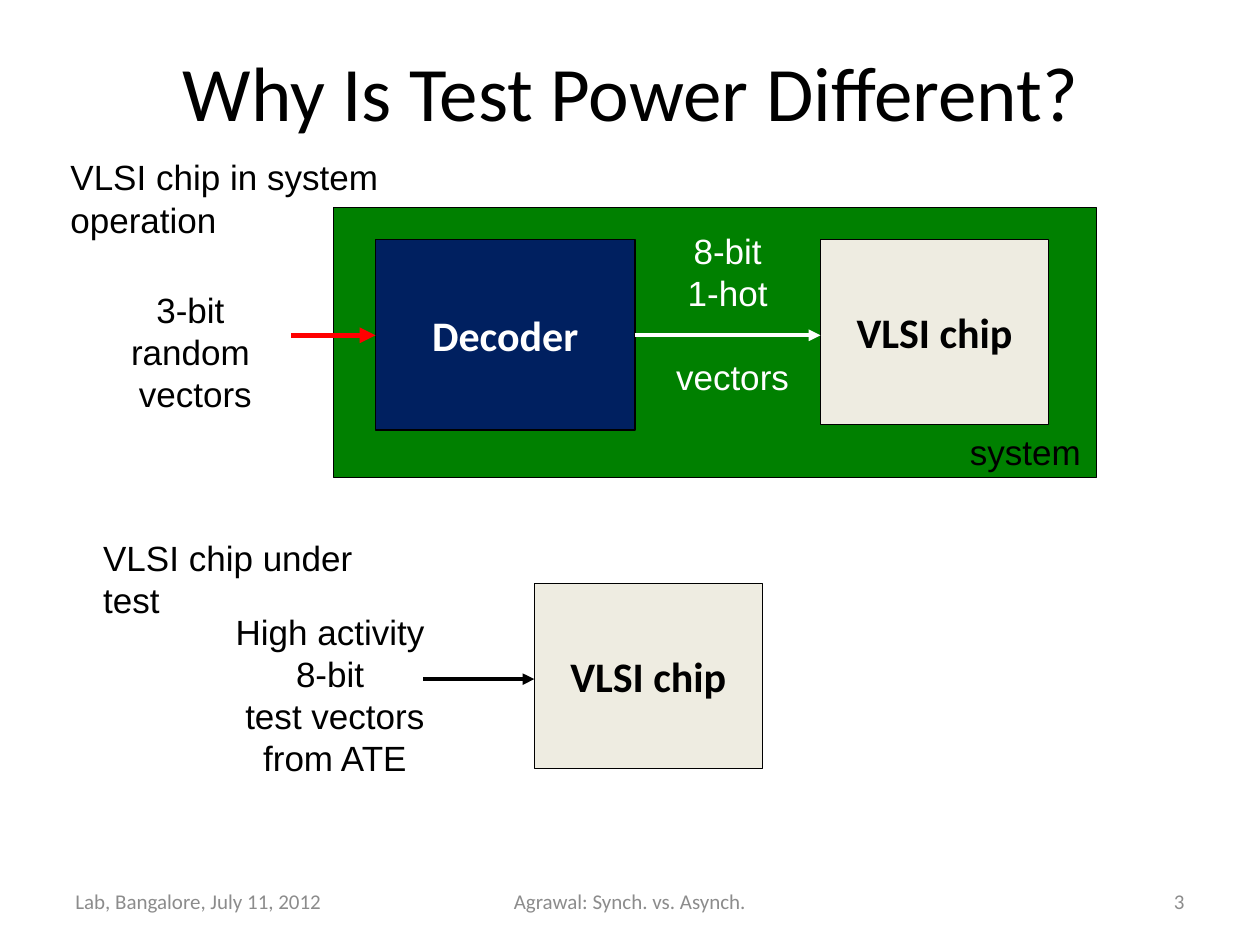
from lxml import etree
from pptx import Presentation
from pptx.dml.color import RGBColor
from pptx.enum.shapes import MSO_CONNECTOR, MSO_SHAPE
from pptx.enum.text import MSO_ANCHOR, PP_ALIGN
from pptx.oxml.ns import qn
from pptx.util import Cm, Pt

RECTANGLE = MSO_SHAPE.RECTANGLE
STRAIGHT = MSO_CONNECTOR.STRAIGHT
MIDDLE, TOP = MSO_ANCHOR.MIDDLE, MSO_ANCHOR.TOP
LEFT, CENTER, RIGHT = PP_ALIGN.LEFT, PP_ALIGN.CENTER, PP_ALIGN.RIGHT
TITLE_ONLY = 5

COLORS = {
    "black": "000000",
    "white": "FFFFFF",
    "red": "FF0000",
    "board": "008000",
    "decoder": "002060",
    "chip": "EEECE1",
    "footer": "8C8C8C",
}
TITLE_FONT = {"name": "Calibri", "size": Pt(44), "bold": False}
BLOCK_FONT = {"name": "Calibri", "size": Pt(24), "bold": True}
LABEL_FONT = {"name": "Arial", "size": Pt(20)}
FOOTER_FONT = {"name": "Calibri", "size": Pt(12)}
LABEL_LINE = Pt(24)


def color(name):
    return RGBColor.from_string(COLORS[name])


def write(frame, lines, font, ink, align=CENTER, anchor=MIDDLE, wrap=True):
    """Fill a text frame with one paragraph per line."""
    frame.word_wrap = wrap
    frame.vertical_anchor = anchor
    for index, line in enumerate(lines):
        paragraph = frame.paragraphs[0] if index == 0 else frame.add_paragraph()
        paragraph.alignment = align
        run = paragraph.add_run()
        run.text = line
        for attribute, value in font.items():
            setattr(run.font, attribute, value)
        run.font.color.rgb = color(ink)


def add_label(slide, box, lines, ink="black", align=CENTER):
    text_box = slide.shapes.add_textbox(*map(Cm, box))
    write(text_box.text_frame, lines, LABEL_FONT, ink, align, TOP)
    for paragraph in text_box.text_frame.paragraphs:
        paragraph.line_spacing = LABEL_LINE
    return text_box


def add_block(slide, box, fill, text=None, ink="black"):
    shape = slide.shapes.add_shape(RECTANGLE, *map(Cm, box))
    shape.shadow.inherit = False
    shape.fill.solid()
    shape.fill.fore_color.rgb = color(fill)
    shape.line.color.rgb = color("black")
    shape.line.width = Pt(0.75)
    if text:
        write(shape.text_frame, [text], BLOCK_FONT, ink, wrap=False)


def add_arrow(slide, start, end, y, ink, width):
    arrow = slide.shapes.add_connector(STRAIGHT, Cm(start), Cm(y), Cm(end), Cm(y))
    arrow.line.color.rgb = color(ink)
    arrow.line.width = Pt(width)
    properties = arrow._element.spPr
    etree.SubElement(properties.find(qn("a:ln")), qn("a:tailEnd"), type="triangle")
    etree.SubElement(properties, qn("a:effectLst"))


def add_title(slide, box, text):
    title = slide.shapes.title
    title.left, title.top, title.width, title.height = map(Cm, box)
    write(title.text_frame, [text], TITLE_FONT, "black")


def add_system_operation(slide, left, top):
    """Chip driven by a decoder on the system board."""
    board_left, decoder_left, chip_left = left + 5.56, left + 6.4, left + 15.37
    decoder_width, block_top, arrow_y = 5.23, top + 1.81, top + 3.74

    # Board and its blocks
    add_block(slide, (board_left, top + 1.17, 15.37, 5.44), "board")
    add_block(slide, (chip_left, block_top, 4.6, 3.73), "chip", "VLSI chip")
    add_block(slide, (decoder_left, block_top, decoder_width, 3.84),
              "decoder", "Decoder", "white")

    # Signals
    add_arrow(slide, decoder_left + decoder_width, chip_left, arrow_y, "white", 2.25)
    add_arrow(slide, left + 4.7, decoder_left, arrow_y, "red", 3)

    # Labels
    add_label(slide, (left, top, 9.65, 1.09), ["VLSI chip in system operation"],
              align=LEFT)
    add_label(slide, (left + 0.51, top + 2.67, 4.32, 1.96),
              ["3-bit random", " vectors"])
    vectors = add_label(slide, (left + 11.7, top + 1.48, 3.6, 3.63),
                        ["8-bit", "1-hot", " vectors"], "white")
    vectors.text_frame.paragraphs[-1].space_before = LABEL_LINE
    add_label(slide, (left + 18.13, top + 5.54, 3, 1.09), ["system"], align=LEFT)


def add_chip_under_test(slide, left, top):
    """Chip driven directly by the tester."""
    chip_left = left + 8.94
    add_block(slide, (chip_left, top + 1.07, 4.6, 3.73), "chip", "VLSI chip")
    add_label(slide, (left, top, 6.6, 1.09), ["VLSI chip under test"], align=LEFT)
    add_label(slide, (left + 2.54, top + 1.5, 4.57, 3.63),
              ["High activity", "8-bit", " test vectors", " from ATE"])
    add_arrow(slide, left + 6.7, chip_left, top + 3, "black", 2.25)


def add_footer(slide, top, height):
    parts = [
        (1.27, 5.93, "Lab, Bangalore, July 11, 2012", LEFT),
        (8.68, 8.04, "Agrawal: Synch. vs. Asynch.", CENTER),
        (18.2, 5.93, "3", RIGHT),
    ]
    for left, width, text, align in parts:
        text_box = slide.shapes.add_textbox(*map(Cm, (left, top, width, height)))
        write(text_box.text_frame, [text], FOOTER_FONT, "footer", align)


def main():
    presentation = Presentation()
    presentation.slide_width, presentation.slide_height = Cm(25.4), Cm(19.05)
    slide = presentation.slides.add_slide(presentation.slide_layouts[TITLE_ONLY])
    add_title(slide, (0.28, 0.76, 24.87, 2.13), "Why Is Test Power Different?")
    add_system_operation(slide, 1.17, 3.02)
    add_chip_under_test(slide, 1.83, 10.69)
    add_footer(slide, 17.65, 1.02)
    presentation.save("out.pptx")


if __name__ == "__main__":
    main()
